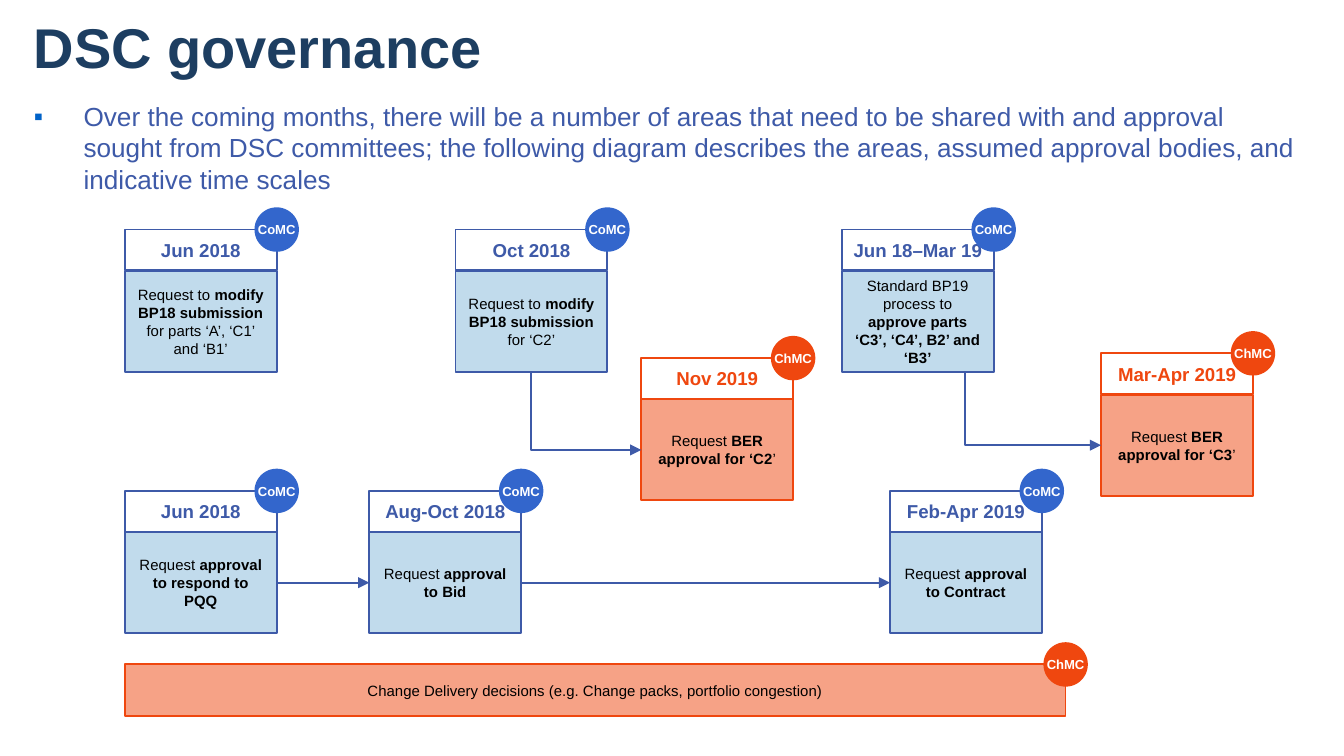
from lxml import etree
from pptx import Presentation
from pptx.dml.color import RGBColor
from pptx.enum.shapes import MSO_CONNECTOR, MSO_SHAPE
from pptx.enum.text import MSO_ANCHOR, PP_ALIGN
from pptx.oxml.ns import qn
from pptx.util import Cm, Pt

RECTANGLE, OVAL = MSO_SHAPE.RECTANGLE, MSO_SHAPE.OVAL
STRAIGHT, ELBOW = MSO_CONNECTOR.STRAIGHT, MSO_CONNECTOR.ELBOW
TOP, MIDDLE = MSO_ANCHOR.TOP, MSO_ANCHOR.MIDDLE
CENTER = PP_ALIGN.CENTER
LEFT_SIDE, RIGHT_SIDE = 1, 3

COLORS = {
    "title": "1D3E61", "blue": "3E5AA8", "bullet": "0062C8", "badge": "3366CC",
    "sky": "84B8DA", "orange": "EF470F", "black": "000000", "white": "FFFFFF",
}
# Outline, body fill and badge fill for each committee
COMMITTEES = {
    "CoMC": ("blue", "sky", "badge"),
    "ChMC": ("orange", "orange", "orange"),
}
CARD_WIDTH, HEADER_HEIGHT = 2.87, 0.77
BODY_OFFSET, BODY_HEIGHT = 0.78, 1.91
BADGE_SIZE = 0.84

deck = Presentation()
deck.slide_width, deck.slide_height = Cm(25.4), Cm(14.29)
page = deck.slides.add_slide(deck.slide_layouts[6])


def add_box(kind, place, spans, size, color, fill=None, line=None, opacity=100, wrap=False):
    """Add a shape with centred text; spans are (text, bold) pairs."""
    box = page.shapes.add_shape(kind, *[Cm(value) for value in place])
    box.shadow.inherit = False
    if fill:
        box.fill.solid()
        box.fill.fore_color.rgb = RGBColor.from_string(COLORS[fill])
        if opacity < 100:
            tint = box._element.spPr.find(qn("a:solidFill"))[0]
            etree.SubElement(tint, qn("a:alpha"), val=str(opacity * 1000))
    else:
        box.fill.background()
    if line:
        box.line.color.rgb = RGBColor.from_string(COLORS[line])
        box.line.width = Pt(1)
    else:
        box.line.fill.background()
    frame = box.text_frame
    frame.word_wrap = wrap
    frame.vertical_anchor = MIDDLE
    frame.margin_left = frame.margin_right = Cm(0.2)
    frame.margin_top = frame.margin_bottom = Cm(0.1)
    para = frame.paragraphs[0]
    para.alignment = CENTER
    for text, bold in spans:
        span = para.add_run()
        span.text = text
        span.font.name, span.font.size, span.font.bold = "Arial", Pt(size), bold
        span.font.color.rgb = RGBColor.from_string(COLORS[color])
    return box


def add_arrow(kind, *ends):
    """Add a thin blue connector with a triangular arrowhead."""
    arrow = page.shapes.add_connector(kind, *ends)
    arrow.line.color.rgb = RGBColor.from_string(COLORS["blue"])
    arrow.line.width = Pt(1)
    etree.SubElement(arrow.line._get_or_add_ln(), qn("a:tailEnd"), type="triangle")
    etree.SubElement(arrow._element.spPr, qn("a:effectLst"))
    return arrow


# Title and introduction
intro = ("Over the coming months, there will be a number of areas that need to be shared "
         "with and approval sought from DSC committees; the following diagram describes "
         "the areas, assumed approval bodies, and indicative time scales")
for text, top, height, size, color, bold, anchor in [
    ("DSC governance", -0.13, 2.01, 30, "title", True, MIDDLE),
    (intro, 1.9, 9.6, 14, "blue", False, TOP),
]:
    box = page.shapes.add_textbox(Cm(0.64), Cm(top), Cm(24.13), Cm(height))
    frame = box.text_frame
    frame.word_wrap = True
    frame.vertical_anchor = anchor
    frame.margin_left = frame.margin_right = frame.margin_top = frame.margin_bottom = 0
    frame.text = text
    para = frame.paragraphs[0]
    if text == intro:
        settings = para._p.get_or_add_pPr()
        settings.set("marL", str(Cm(0.94)))
        settings.set("indent", str(-Cm(0.94)))
        bullet_color = etree.SubElement(settings, qn("a:buClr"))
        etree.SubElement(bullet_color, qn("a:srgbClr"), val=COLORS["bullet"])
        etree.SubElement(settings, qn("a:buFont"), typeface="Arial")
        etree.SubElement(settings, qn("a:buChar"), char="▪")
    span = para.runs[0]
    span.font.name, span.font.size, span.font.bold = "Arial", Pt(size), bold
    span.font.color.rgb = RGBColor.from_string(COLORS[color])

# Approval cards: name, left, top, committee, date, description
UPPER_ROW, LOWER_ROW = 4.34, 9.28
cards = [
    ("modify A", 2.36, UPPER_ROW, "CoMC", "Jun 2018",
     [("Request to ", False), ("modify BP18 submission ", True),
      ("for parts ‘A’, ‘C1’ and ‘B1’", False)]),
    ("respond", 2.36, LOWER_ROW, "CoMC", "Jun 2018",
     [("Request ", False), ("approval to respond to PQQ", True)]),
    ("bid", 6.98, LOWER_ROW, "CoMC", "Aug-Oct 2018",
     [("Request ", False), ("approval to Bid", True)]),
    ("contract", 16.82, LOWER_ROW, "CoMC", "Feb-Apr 2019",
     [("Request ", False), ("approval to Contract", True)]),
    ("BER C2", 12.12, 6.77, "ChMC", "Nov 2019",
     [("Request ", False), ("BER approval for ‘C2", True), ("’", False)]),
    ("modify C2", 8.61, UPPER_ROW, "CoMC", "Oct 2018",
     [("Request to ", False), ("modify BP18 submission ", True), ("for ‘C2’", False)]),
    ("BP19", 15.91, UPPER_ROW, "CoMC", "Jun 18–Mar 19",
     [("Standard BP19 process to ", False),
      ("approve parts ‘C3’, ‘C4’, B2’ and ‘B3’", True)]),
    ("BER C3", 20.81, 6.68, "ChMC", "Mar-Apr 2019",
     [("Request ", False), ("BER approval for ‘C3", True), ("’", False)]),
]
bodies = {}
badges = []
for name, left, top, committee, date, description in cards:
    outline, fill, badge_fill = COMMITTEES[committee]
    add_box(RECTANGLE, (left, top, CARD_WIDTH, HEADER_HEIGHT), [(date, True)],
            10, outline, line=outline)
    bodies[name] = add_box(
        RECTANGLE, (left, top + BODY_OFFSET, CARD_WIDTH, BODY_HEIGHT), description,
        8, "black", fill=fill, line=outline, opacity=50, wrap=True)
    badges.append((left + CARD_WIDTH, top, committee))

# Change delivery bar
bar_left, bar_top, bar_width = 2.36, 12.56, 17.78
add_box(RECTANGLE, (bar_left, bar_top, bar_width, 0.97),
        [("Change Delivery decisions (e.g. Change packs, portfolio congestion)", False)],
        8, "black", fill="orange", line="orange", opacity=50, wrap=True)
badges.append((bar_left + bar_width, bar_top, "ChMC"))

# Committee badges, centred on the top right corners
for x, y, committee in badges:
    place = (x - BADGE_SIZE / 2, y - BADGE_SIZE / 2, BADGE_SIZE, BADGE_SIZE)
    add_box(OVAL, place, [(committee, True)], 7, "white", fill=COMMITTEES[committee][2])

# Straight arrows along the lower row
for source, target in [("respond", "bid"), ("bid", "contract")]:
    arrow = add_arrow(STRAIGHT, 0, 0, 0, 0)
    arrow.begin_connect(bodies[source], RIGHT_SIDE)
    arrow.end_connect(bodies[target], LEFT_SIDE)

# Single-bend arrows: down from the source, then right into the target
for source, target, offset in [("modify C2", "BER C2", 1.43), ("BP19", "BER C3", 2.33)]:
    start, end = bodies[source], bodies[target]
    x, y = start.left + Cm(offset), start.top + start.height
    across = end.left - x
    down = end.top + end.height // 2 - y
    # The frame is given before its quarter turn, so width and height swap
    left, top = x + (across - down) // 2, y + (down - across) // 2
    arrow = add_arrow(ELBOW, left, top, left + down, top + across)
    arrow._element.spPr.find(qn("a:prstGeom")).set("prst", "bentConnector2")
    turn = arrow._element.spPr.find(qn("a:xfrm"))
    turn.set("rot", "16200000")
    turn.set("flipH", "1")

deck.save("out.pptx")
